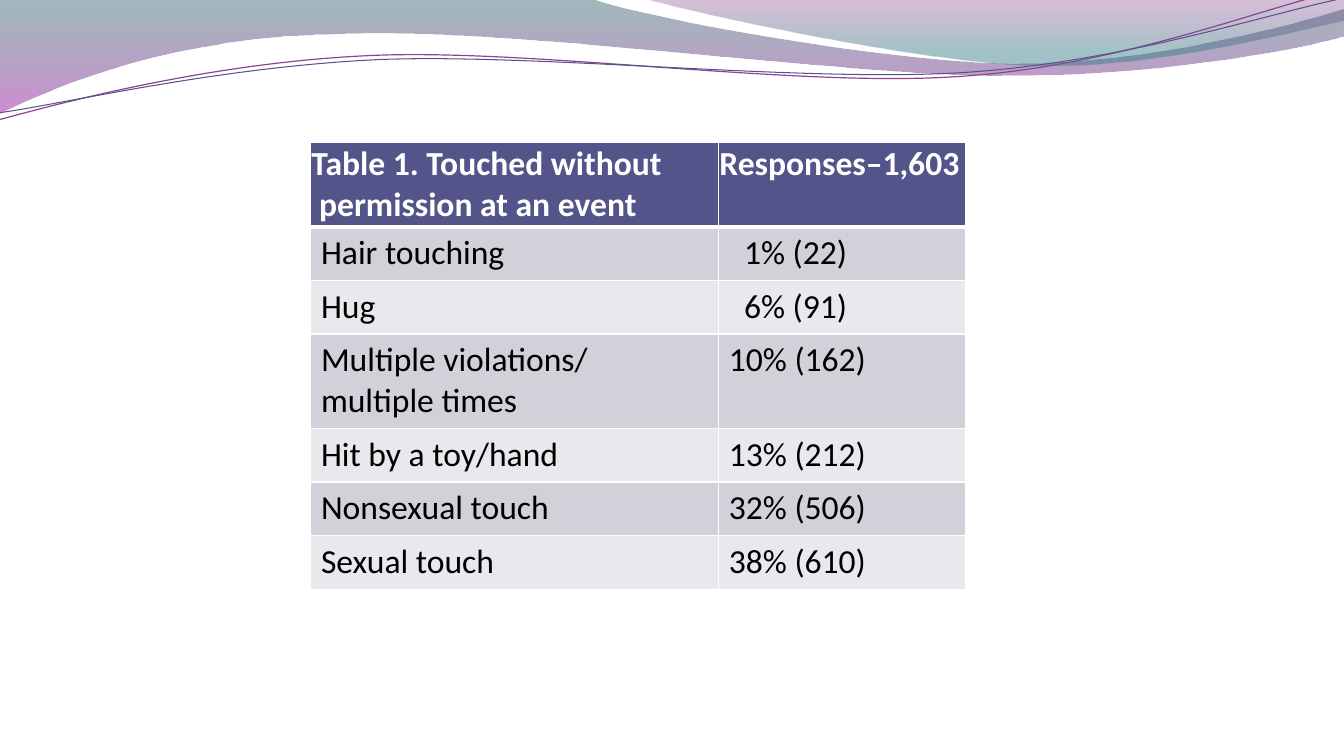
import dataclasses
import typing

import lxml.etree
import pptx
import pptx.dml.color
import pptx.oxml.ns
import pptx.presentation
import pptx.shapes.autoshape
import pptx.slide
import pptx.table
import pptx.util

Cm = pptx.util.Cm
Point = tuple[float, float]
Segment = tuple[float, ...]


@dataclasses.dataclass(frozen=True)
class Theme:
    font: str = "Calibri"
    text_size: float = 24
    header_fill: str = "53548A"
    header_text: str = "FFFFFF"
    body_text: str = "000000"
    band_fills: tuple[str, str] = ("D1D1DA", "E9E9ED")
    border: str = "FFFFFF"
    thin_border: float = 1
    thick_border: float = 3
    teal_dark: str = "2D6368"
    teal: str = "2F7B82"
    violet: str = "A530A9"
    plum: str = "7F2F82"
    orchid_line: str = "8D4490"
    indigo_line: str = "53548A"


THEME = Theme()


@dataclasses.dataclass(frozen=True)
class GradientStop:
    position: float
    color: str
    opacity: int


@dataclasses.dataclass(frozen=True)
class Wave:
    start: Point
    segments: tuple[Segment, ...]
    stops: tuple[GradientStop, ...] = ()
    line_color: str = ""
    line_width: float = 0


@dataclasses.dataclass(frozen=True)
class TableRow:
    label: str
    value: str
    height: float = 1.35
    value_indent: float = 0


WAVES = (
    Wave(
        (0, 0),
        (
            (14.91, -0.03),
            (16.1, 0.43, 22.48, 1.6, 25.68, 1.6),
            (28.91, 1.6, 32.46, 0.66, 33.86, 0.23),
            (33.91, 0.91),
            (33.3, 1.12, 29.46, 1.93, 25.25, 1.91),
            (21.06, 1.91, 12.93, 0.71, 8.71, 0.86),
            (4.37, 0.91, 1.55, 2.11, -0.03, 2.87),
            (0, 0),
        ),
        stops=(GradientStop(0, THEME.teal_dark, 45), GradientStop(1, THEME.violet, 55)),
    ),
    Wave(
        (16.23, -0.03),
        (
            (17.25, 0.28, 23.09, 1.57, 26.04, 1.65),
            (28.98, 1.75, 32.56, 0.81, 33.86, 0.53),
            (33.86, 0),
            (16.23, -0.03),
        ),
        stops=(GradientStop(0, THEME.plum, 30), GradientStop(0.8, THEME.teal, 45)),
    ),
    Wave(
        (-0.03, 3.02),
        (
            (1.63, 2.57, 5.36, 1.57, 9.37, 1.4),
            (13.39, 1.22, 20.07, 2.21, 24.13, 1.93),
            (28.19, 1.68, 31.8, 0.2, 33.81, -0.25),
        ),
        line_color=THEME.orchid_line,
        line_width=0.85,
    ),
    Wave(
        (0, 2.84),
        (
            (1.6, 2.62, 5.54, 1.68, 9.6, 1.5),
            (13.64, 1.35, 20.22, 2.08, 24.26, 1.83),
            (28.32, 1.57, 31.88, 0.36, 33.88, -0.05),
        ),
        line_color=THEME.indigo_line,
        line_width=0.75,
    ),
)

SHORT_VALUE_INDENT = 0.38
HEADER = TableRow("Table 1. Touched without\n permission at an event", "Responses–1,603", 2.11)
BODY = (
    TableRow("Hair touching", "1% (22)", value_indent=SHORT_VALUE_INDENT),
    TableRow("Hug", "6% (91)", value_indent=SHORT_VALUE_INDENT),
    TableRow("Multiple violations/\nmultiple times", "10% (162)", 2.38),
    TableRow("Hit by a toy/hand", "13% (212)"),
    TableRow("Nonsexual touch", "32% (506)"),
    TableRow("Sexual touch", "38% (610)"),
)
COLUMN_WIDTHS = (10.28, 6.24)
HEADER_INSETS = (0.03, 0.03, 0.03, 0.03)
BODY_INSETS = (0.27, 0.15, 0.53, 0.15)


def rgb(color: str) -> pptx.dml.color.RGBColor:
    return pptx.dml.color.RGBColor.from_string(color)


def add_xml(parent: typing.Any, tag: str, **attributes: str) -> typing.Any:
    return lxml.etree.SubElement(parent, pptx.oxml.ns.qn(tag), attributes)


def bend(shape: pptx.shapes.autoshape.Shape, segments: tuple[Segment, ...]) -> None:
    edges = list(shape.element.iter(pptx.oxml.ns.qn("a:lnTo")))
    for edge, segment in zip(edges, segments):
        if len(segment) == 2:
            continue
        edge.tag = pptx.oxml.ns.qn("a:cubicBezTo")
        edge.remove(edge[0])
        for x, y in zip(segment[::2], segment[1::2]):
            add_xml(edge, "a:pt", x=str(Cm(x) - shape.left), y=str(Cm(y) - shape.top))


def fill_gradient(shape: pptx.shapes.autoshape.Shape, stops: tuple[GradientStop, ...]) -> None:
    shape.fill.gradient()
    shape.fill.gradient_angle = 270
    for target, stop in zip(shape.fill.gradient_stops, stops):
        target.position = stop.position
        target.color.rgb = rgb(stop.color)
    for color, stop in zip(shape.element.iter(pptx.oxml.ns.qn("a:srgbClr")), stops):
        add_xml(color, "a:alpha", val=str(stop.opacity * 1000))


def draw_wave(slide: pptx.slide.Slide, wave: Wave) -> None:
    builder = slide.shapes.build_freeform(Cm(wave.start[0]), Cm(wave.start[1]))
    anchors = [(Cm(segment[-2]), Cm(segment[-1])) for segment in wave.segments]
    builder.add_line_segments(anchors, close=bool(wave.stops))
    shape = builder.convert_to_shape()
    bend(shape, wave.segments)
    shape.shadow.inherit = False
    if wave.stops:
        fill_gradient(shape, wave.stops)
        shape.line.fill.background()
    else:
        shape.fill.background()
        shape.line.color.rgb = rgb(wave.line_color)
        shape.line.width = pptx.util.Pt(wave.line_width)


def draw_borders(cell: typing.Any, row_index: int) -> None:
    thick_side = {0: "a:lnB", 1: "a:lnT"}.get(row_index)
    properties = cell._tc.get_or_add_tcPr()
    for side in ("a:lnL", "a:lnR", "a:lnT", "a:lnB"):
        width = THEME.thick_border if side == thick_side else THEME.thin_border
        line = add_xml(properties, side, w=str(pptx.util.Pt(width)))
        add_xml(add_xml(line, "a:solidFill"), "a:srgbClr", val=THEME.border)


def format_cell(cell: typing.Any, text: str, row_index: int) -> None:
    is_header = row_index == 0
    draw_borders(cell, row_index)
    cell.fill.solid()
    cell.fill.fore_color.rgb = rgb(
        THEME.header_fill if is_header else THEME.band_fills[(row_index - 1) % 2]
    )
    insets = HEADER_INSETS if is_header else BODY_INSETS
    cell.margin_left, cell.margin_top, cell.margin_right, cell.margin_bottom = map(Cm, insets)
    cell.text_frame.text = text
    for paragraph in cell.text_frame.paragraphs:
        paragraph.font.name = THEME.font
        paragraph.font.size = pptx.util.Pt(THEME.text_size)
        paragraph.font.bold = is_header
        paragraph.font.color.rgb = rgb(THEME.header_text if is_header else THEME.body_text)


def draw_table(slide: pptx.slide.Slide) -> None:
    rows = (HEADER, *BODY)
    height = sum(row.height for row in rows)
    frame = slide.shapes.add_table(
        len(rows), len(COLUMN_WIDTHS), Cm(7.82), Cm(3.59), Cm(sum(COLUMN_WIDTHS)), Cm(height)
    )
    table: pptx.table.Table = frame.table
    for column, width in zip(table.columns, COLUMN_WIDTHS):
        column.width = Cm(width)
    for row_index, row in enumerate(rows):
        table.rows[row_index].height = Cm(row.height)
        for column_index, text in enumerate((row.label, row.value)):
            format_cell(table.cell(row_index, column_index), text, row_index)
        if row.value_indent:
            paragraph = table.cell(row_index, 1).text_frame.paragraphs[0]
            paragraph._p.get_or_add_pPr().set("marL", str(Cm(row.value_indent)))


def main() -> None:
    presentation: pptx.presentation.Presentation = pptx.Presentation()
    presentation.slide_width = Cm(33.87)
    presentation.slide_height = Cm(19.05)
    slide = presentation.slides.add_slide(presentation.slide_layouts[6])
    for wave in WAVES:
        draw_wave(slide, wave)
    draw_table(slide)
    presentation.save("out.pptx")


if __name__ == "__main__":
    main()
